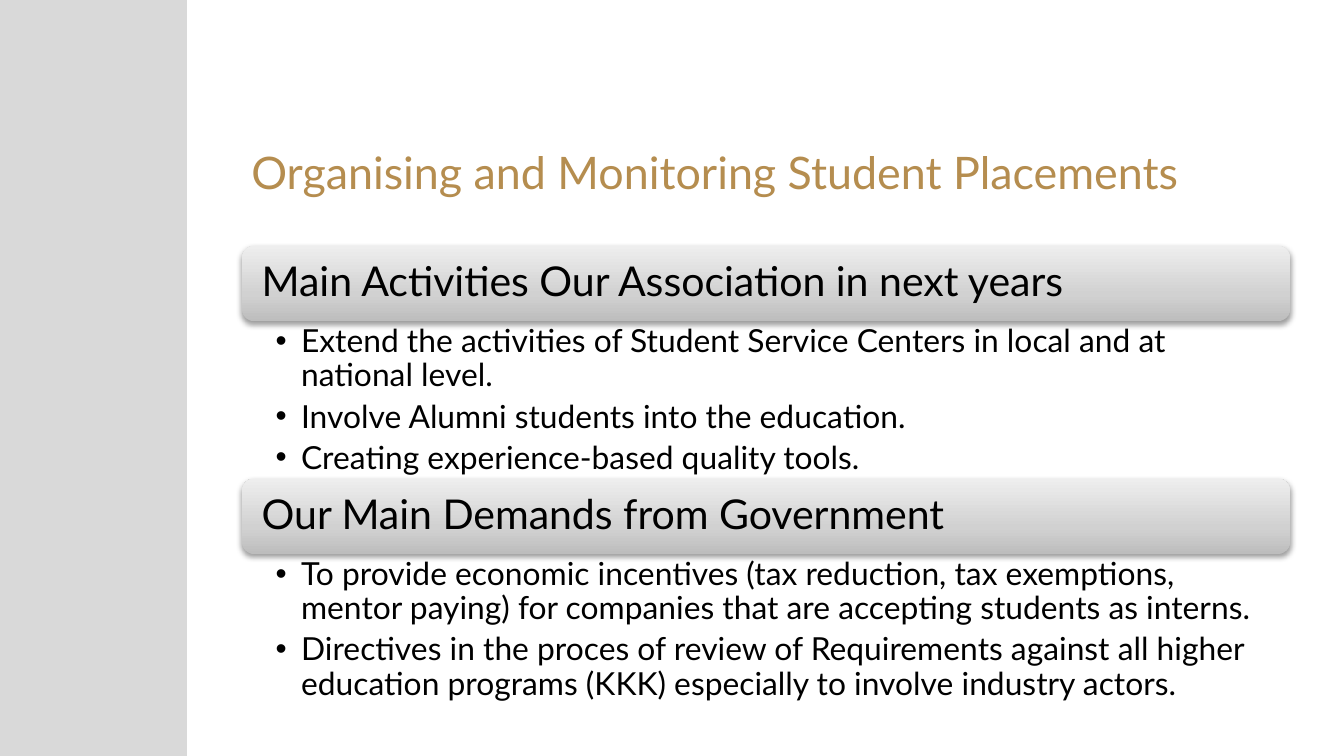
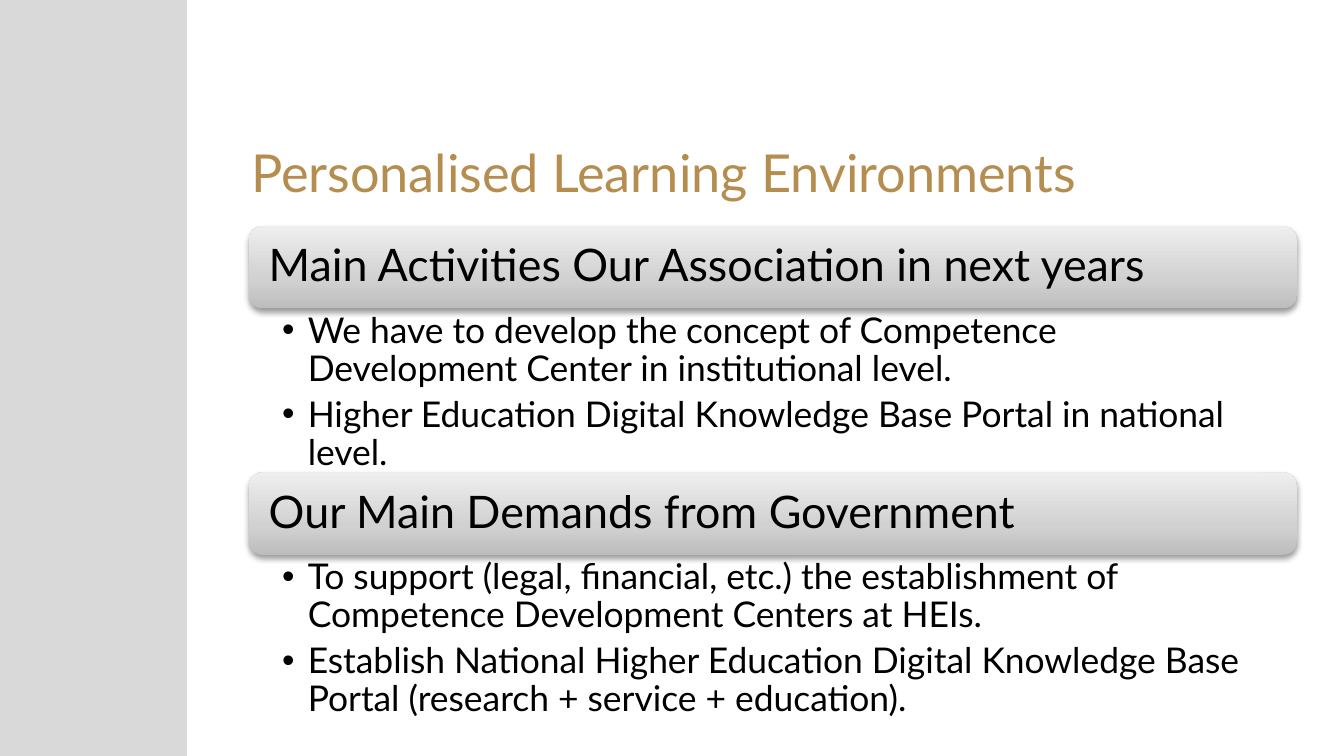
"""Build two slides of activities and demands under shaded headings."""
from dataclasses import dataclass
from typing import Any

from pptx import Presentation
from pptx.dml.color import RGBColor
from pptx.enum.shapes import MSO_SHAPE as Shape
from pptx.enum.text import MSO_ANCHOR as Anchor, MSO_AUTO_SIZE as AutoSize, PP_ALIGN as Align
from pptx.oxml import parse_xml
from pptx.oxml.ns import nsdecls, qn
from pptx.util import Inches, Pt

WIDTH, HEIGHT = Inches(10), Inches(5.625)
COLUMNS = ROWS = 100
FONT = "Lato"
COLOURS = {"side": "D9D9D9", "title": "B58D4F", "text": "000000", "shadow": "000000"}
BAND_STOPS = {0: "BDBDBD", 35: "D1D1D1", 100: "EEEEEE"}
SIDE_COLUMNS, BAND_COLUMNS = 13.8, 78
TITLE_LEFT, TITLE_TOP, TITLE_ROWS = 17.7, 17.4, 10.5
LIST_INDENT = Inches(0.19)
FRAME = {"word_wrap": True, "auto_size": AutoSize.NONE}
TITLE_FRAME = FRAME | {"vertical_anchor": Anchor.MIDDLE}
BAND_FRAME = TITLE_FRAME | {"margin_left": Inches(0.12), "margin_right": Inches(0.12)}
LIST_FRAME = FRAME | {
    "vertical_anchor": Anchor.TOP,
    "margin_left": Inches(0.25),
    "margin_right": Inches(0.18),
    "margin_top": Inches(0.03),
    "margin_bottom": Inches(0.03),
}
LEFT_PARA = {"alignment": Align.LEFT, "space_before": Pt(0)}
ACTIVITIES = "Main Activities Our Association in next years"
DEMANDS = "Our Main Demands from Government"


@dataclass(frozen=True)
class Section:
    """A heading, the rows its list fills, and the list."""

    heading: str
    rows: float
    items: tuple[str, ...]


@dataclass(frozen=True)
class Topic:
    """The content, text sizes and grid places of one slide."""

    title: str
    title_size: int
    title_columns: float
    left: float
    top: float
    band_rows: float
    band_size: int
    list_size: int
    sections: tuple[Section, ...]


TOPICS = (
    Topic(
        "Organising and Monitoring Student Placements", 24, 81.1, 18, 32.5, 10, 22, 17,
        (
            Section(ACTIVITIES, 20.8, (
                "Extend the activities of Student Service Centers in local and at national level.",
                "Involve Alumni students into the education.",
                "Creating experience-based quality tools.",
            )),
            Section(DEMANDS, 19.6, (
                "To provide economic incentives (tax reduction, tax exemptions, mentor paying) "
                "for companies that are accepting students as interns.",
                "Directives in the proces of review of Requirements against all higher education "
                "programs (KKK) especially to involve industry actors.",
            )),
        ),
    ),
    Topic(
        "Personalised Learning Environments", 28, 78, 18.5, 29.9, 10.9, 24, 19,
        (
            Section(ACTIVITIES, 21.7, (
                "We have to develop the concept of Competence Development Center in "
                "institutional level.",
                "Higher Education Digital Knowledge Base Portal in national level.",
            )),
            Section(DEMANDS, 25.6, (
                "To support (legal, financial, etc.) the establishment of Competence "
                "Development Centers at HEIs.",
                "Establish National Higher Education Digital Knowledge Base Portal "
                "(research + service + education).",
            )),
        ),
    ),
)


def apply(target: Any, values: dict[str, Any]) -> None:
    """Set each named attribute on the target."""
    for name, value in values.items():
        setattr(target, name, value)


def cell(left: float, top: float, columns: float, rows: float) -> dict[str, int]:
    """Turn a grid area into a position and a size."""
    across, down = WIDTH / COLUMNS, HEIGHT / ROWS
    return {
        "left": round(left * across),
        "top": round(top * down),
        "width": round(columns * across),
        "height": round(rows * down),
    }


def write(para: Any, text: str, size: int, colour: str, values: dict[str, Any]) -> None:
    """Fill a paragraph with one formatted run."""
    apply(para, LEFT_PARA | values)
    span = para.add_run()
    span.text = text
    apply(span.font, {"name": FONT, "size": Pt(size)})
    span.font.color.rgb = RGBColor.from_string(COLOURS[colour])


def add_side(page: Any) -> None:
    """Place the side panel on the layout of the page."""
    panel = page.shapes.add_shape(Shape.RECTANGLE, **cell(0, 0, SIDE_COLUMNS, ROWS))
    colour = RGBColor.from_string(COLOURS["side"])
    panel.fill.solid()
    panel.fill.fore_color.rgb = panel.line.color.rgb = colour
    panel.line.width = Pt(2)
    panel.shadow.inherit = False
    page.slide_layout.shapes.element.insert(2, panel.element)


def shade(box: Any) -> None:
    """Give a box its gradient and soft shadow."""
    box.line.fill.background()
    box.shadow.inherit = False
    box.fill.gradient()
    stops = "".join(
        f'<a:gs pos="{place * 1000}"><a:srgbClr val="{colour}"/></a:gs>'
        for place, colour in BAND_STOPS.items()
    )
    parts = {
        "a:gradFill": f'<a:gsLst>{stops}</a:gsLst><a:lin ang="16200000" scaled="0"/>',
        "a:effectLst": '<a:outerShdw blurRad="40000" dist="20000" dir="5400000" rotWithShape="0">'
        f'<a:srgbClr val="{COLOURS["shadow"]}"><a:alpha val="38000"/></a:srgbClr></a:outerShdw>',
    }
    properties = box.element.spPr
    for tag, content in parts.items():
        part = parse_xml(f"<{tag} {nsdecls('a')}>{content}</{tag}>")
        properties.replace(properties.find(qn(tag)), part)


def add_band(page: Any, topic: Topic, heading: str, top: float) -> None:
    """Draw a shaded heading."""
    area = cell(topic.left, top, BAND_COLUMNS, topic.band_rows)
    box = page.shapes.add_shape(Shape.ROUNDED_RECTANGLE, **area)
    shade(box)
    apply(box.text_frame, BAND_FRAME)
    write(box.text_frame.paragraphs[0], heading, topic.band_size, "text", {"line_spacing": 0.9})


def fill_list(box: Any, topic: Topic, section: Section, top: float) -> None:
    """Move a body placeholder into place and fill it with bullets."""
    apply(box, cell(topic.left, top, BAND_COLUMNS, section.rows))
    frame = box.text_frame
    apply(frame, LIST_FRAME)
    values = {"level": 1, "line_spacing": 0.9, "space_after": Pt(round(topic.list_size * 0.21, 1))}
    for index, item in enumerate(section.items):
        para = frame.add_paragraph() if index else frame.paragraphs[0]
        properties = para._p.get_or_add_pPr()
        properties.set("marL", str(LIST_INDENT))
        properties.set("indent", str(-LIST_INDENT))
        properties.append(parse_xml(f'<a:buChar {nsdecls("a")} char="•"/>'))
        write(para, item, topic.list_size, "text", values)


def add_topic(page: Any, topic: Topic) -> None:
    """Write the title and stack the sections of one slide."""
    title, *lists = page.placeholders
    apply(title, cell(TITLE_LEFT, TITLE_TOP, topic.title_columns, TITLE_ROWS))
    apply(title.text_frame, TITLE_FRAME)
    write(title.text_frame.paragraphs[0], topic.title, topic.title_size, "title", {})
    top = topic.top
    for box, section in zip(lists, topic.sections):
        add_band(page, topic, section.heading, top)
        top += topic.band_rows
        fill_list(box, topic, section, top)
        top += section.rows


def main() -> None:
    """Build and save the deck."""
    deck = Presentation()
    apply(deck, {"slide_width": WIDTH, "slide_height": HEIGHT})
    layout = deck.slide_layouts.get_by_name("Two Content")
    pages = [deck.slides.add_slide(layout) for _ in TOPICS]
    add_side(pages[0])
    for page, topic in zip(pages, TOPICS):
        add_topic(page, topic)
    deck.save("out.pptx")


if __name__ == "__main__":
    main()
